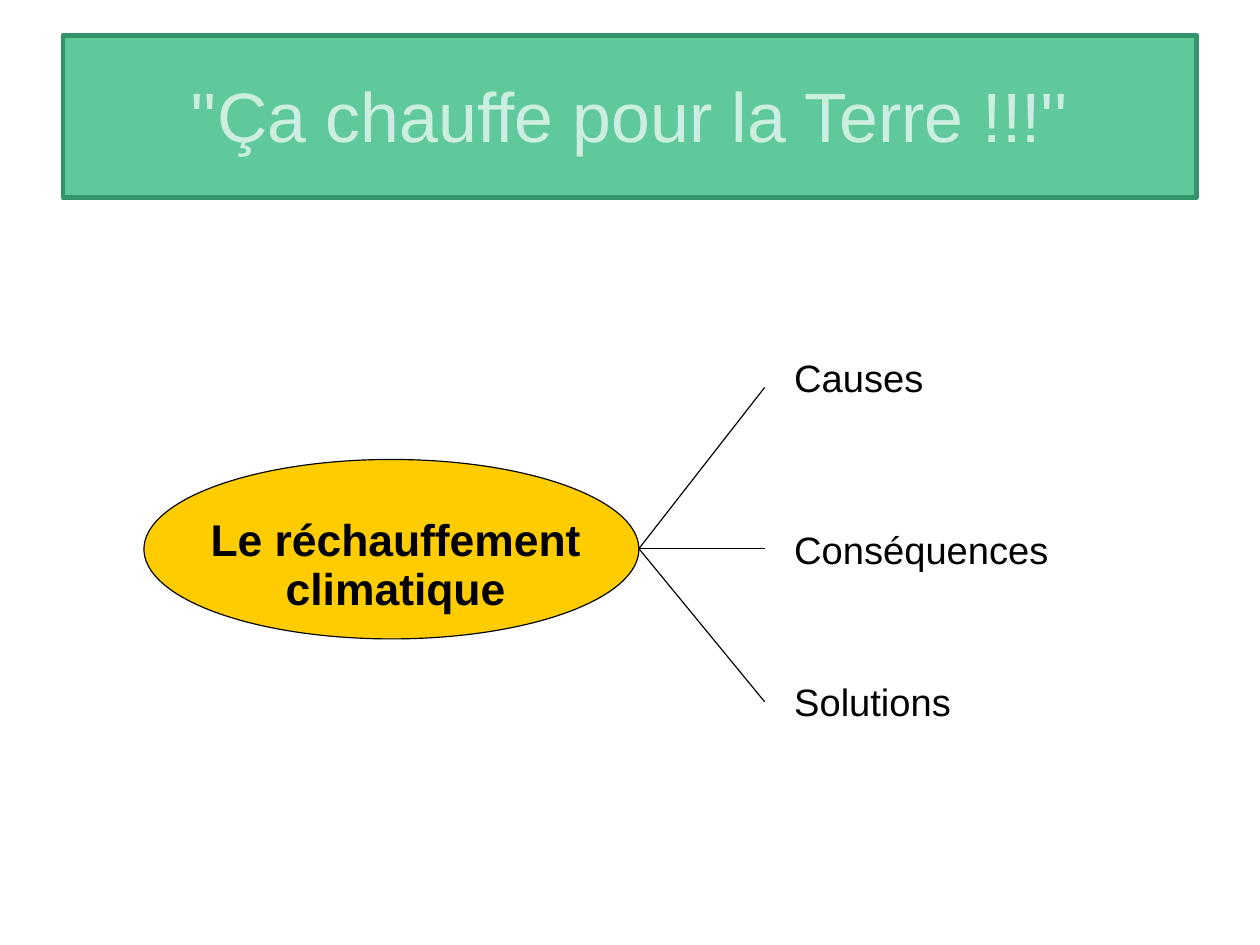
"""Build a mind map slide on global warming."""
from pptx import Presentation
from pptx.dml.color import RGBColor
from pptx.enum.shapes import MSO_CONNECTOR, MSO_SHAPE
from pptx.enum.text import MSO_ANCHOR, MSO_AUTO_SIZE, PP_ALIGN
from pptx.oxml.ns import qn
from pptx.util import Inches, Pt
from lxml import etree

LINE = MSO_CONNECTOR.STRAIGHT
OVAL = MSO_SHAPE.OVAL
MID, TOP = MSO_ANCHOR.MIDDLE, MSO_ANCHOR.TOP
LEFT, CENTER = PP_ALIGN.LEFT, PP_ALIGN.CENTER
FIXED = MSO_AUTO_SIZE.NONE
BLACK = "000000"


def paint(fmt, color):
    fmt.solid()
    fmt.fore_color.rgb = RGBColor.from_string(color)


def write(shape, text, size, color, align, anchor, pads, bold=False):
    frame = shape.text_frame
    frame.word_wrap = True
    frame.auto_size = FIXED
    frame.vertical_anchor = anchor
    pads = [Inches(pad) for pad in pads]
    frame.margin_left, frame.margin_top, frame.margin_right, frame.margin_bottom = pads
    para = frame.paragraphs[0]
    para.alignment = align
    para.line_spacing = 0.93
    run = para.add_run()
    run.text = text
    run.font.name = "Arial"
    run.font.size = Pt(size)
    run.font.bold = bold
    paint(run.font.fill, color)


deck = Presentation()
deck.slide_width, deck.slide_height = Inches(28 / 2.54), Inches(21 / 2.54)
slide = deck.slides.add_slide(deck.slide_layouts[5])
shapes = slide.shapes

title = shapes.title
title.left, title.top = Inches(0.55), Inches(0.31)
title.width, title.height = Inches(9.92), Inches(1.42)
paint(title.fill, "60C99C")
paint(title.line.fill, "32946A")
title.line.width = Pt(2.83)
write(title, "''Ça chauffe pour la Terre !!!''", 44, "CCEEDF", CENTER, MID,
      (0.02, 0.06, 0.02, 0.02))

oval = shapes.add_shape(OVAL, Inches(1.26), Inches(4.02), Inches(4.33), Inches(1.57))
oval.shadow.inherit = False
paint(oval.fill, "FFCC00")
paint(oval.line.fill, BLACK)
oval.line.width = Pt(0.75)

pads = (0.1, 0.07, 0.1, 0.05)
topic = shapes.add_textbox(Inches(1.1), Inches(4.45), Inches(4.72), Inches(0.45))
write(topic, "Le réchauffement climatique", 28, BLACK, CENTER, TOP, pads, True)

hub = Inches(5.59), Inches(4.8)
for text, end, top, width in (
    ("Causes", 3.39, 3.07, 3.23),
    ("Conséquences", 4.8, 4.57, 2.76),
    ("Solutions", 6.14, 5.9, 3.39),
):
    branch = shapes.add_connector(LINE, *hub, Inches(6.69), Inches(end))
    paint(branch.line.fill, BLACK)
    branch.line.width = Pt(0.75)
    etree.SubElement(branch.element.spPr, qn("a:effectLst"))
    label = shapes.add_textbox(Inches(6.85), Inches(top), Inches(width), Inches(0.47))
    write(label, text, 24, BLACK, LEFT, TOP, pads)

deck.save("out.pptx")
